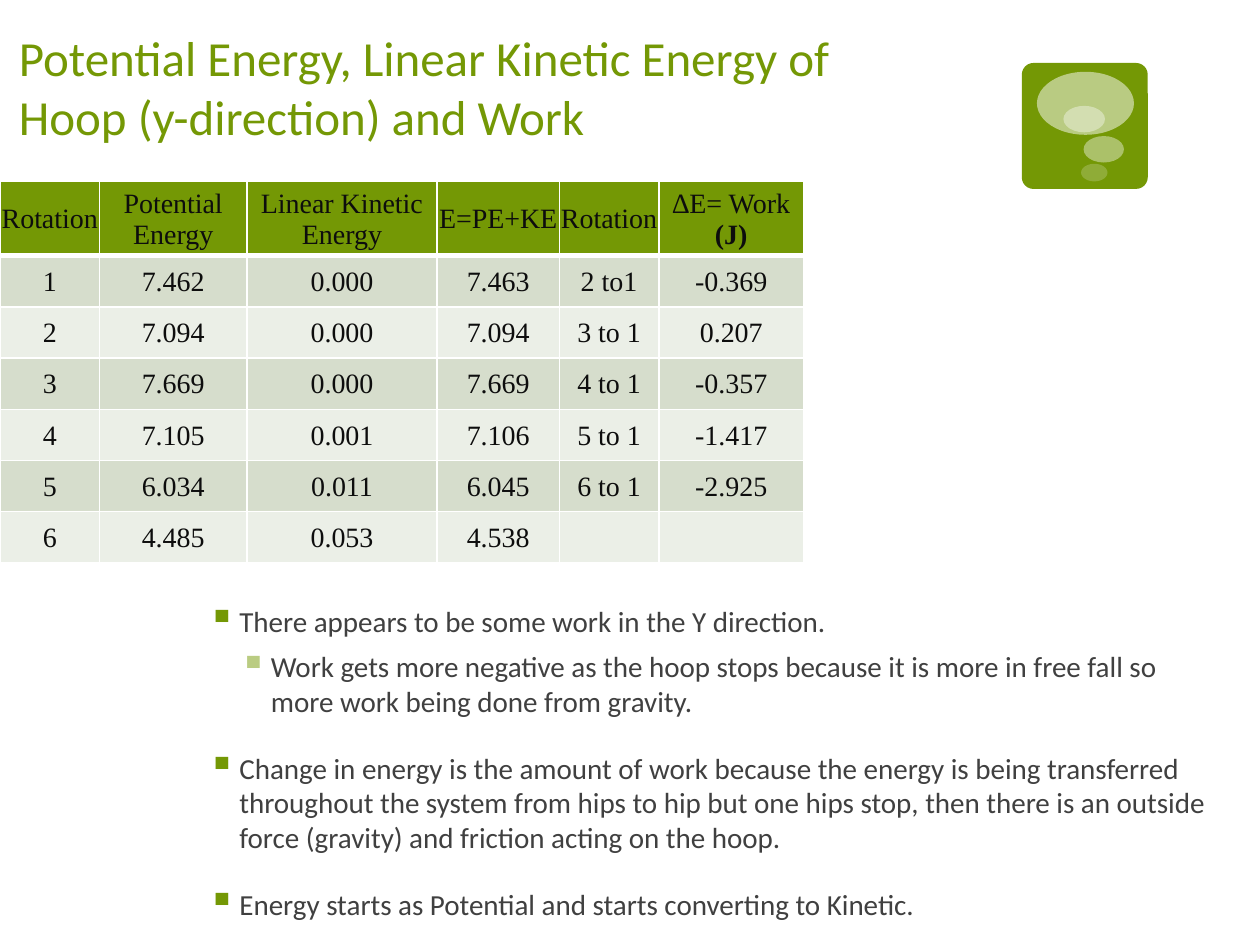
from dataclasses import dataclass

from lxml import etree
from pptx import Presentation
from pptx.dml.color import RGBColor
from pptx.enum.shapes import MSO_SHAPE
from pptx.enum.text import MSO_ANCHOR, PP_ALIGN
from pptx.oxml.ns import qn
from pptx.util import Inches, Pt

ROUNDED, ELLIPSE = MSO_SHAPE.ROUNDED_RECTANGLE, MSO_SHAPE.OVAL
TOP, MIDDLE, BOTTOM = MSO_ANCHOR.TOP, MSO_ANCHOR.MIDDLE, MSO_ANCHOR.BOTTOM
CENTER = PP_ALIGN.CENTER


@dataclass(frozen=True)
class Theme:
    green: str = "749805"
    pale_green: str = "BACC82"
    white: str = "FFFFFF"
    body_text: str = "404040"
    table_text: str = "0D0D0D"
    bands: tuple = ("D6DDCC", "EBEFE7")
    font: str = "Calibri"
    table_font: str = "Times New Roman"
    title_size: float = 28
    table_size: float = 16
    body_size: float = 16.6


THEME = Theme()

TITLE = "Potential Energy, Linear Kinetic Energy of Hoop (y-direction) and Work"

# Left, top, width and height as shares of the badge; last is the opacity in percent.
BUBBLES = [
    (0.12, 0.07, 0.77, 0.50, 50),
    (0.49, 0.58, 0.32, 0.21, 40),
    (0.47, 0.80, 0.21, 0.14, 20),
    (0.33, 0.34, 0.33, 0.21, 38),
]

COLUMN_WIDTHS = [0.79, 1.17, 1.51, 0.97, 0.79, 1.15]
HEADER_HEIGHT = 0.59
ENERGY_ROWS = [
    ["Rotation", "Potential Energy", "Linear Kinetic Energy", "E=PE+KE", "Rotation", "∆E= Work\n(J)"],
    ["1", "7.462", "0.000", "7.463", "2 to1", "-0.369"],
    ["2", "7.094", "0.000", "7.094", "3 to 1", "0.207"],
    ["3", "7.669", "0.000", "7.669", "4 to 1", "-0.357"],
    ["4", "7.105", "0.001", "7.106", "5 to 1", "-1.417"],
    ["5", "6.034", "0.011", "6.045", "6 to 1", "-2.925"],
    ["6", "4.485", "0.053", "4.538", "", ""],
]

# Indent level and text.
FINDINGS = [
    (0, "There appears to be some work in the Y direction."),
    (1, "Work gets more negative as the hoop stops because it is more in free fall "
        "so more work being done from gravity."),
    (0, "Change in energy is the amount of work because the energy is being transferred "
        "throughout the system from hips to hip but one hips stop, then there is an "
        "outside force (gravity) and friction acting on the hoop."),
    (0, "Energy starts as Potential and starts converting to Kinetic."),
]


def inches(values):
    return [Inches(value) for value in values]


def add_child(parent, tag, **attributes):
    return etree.SubElement(parent, qn(tag), {name: str(value) for name, value in attributes.items()})


def style_runs(paragraph, font, size, color):
    for run in paragraph.runs:
        run.font.name = font
        run.font.size = Pt(size)
        run.font.color.rgb = RGBColor.from_string(color)


def add_text_frame(slide, box, anchor):
    text_frame = slide.shapes.add_textbox(*inches(box)).text_frame
    text_frame.word_wrap = True
    text_frame.vertical_anchor = anchor
    text_frame.margin_left = text_frame.margin_top = text_frame.margin_bottom = Inches(0.05)
    text_frame.margin_right = Inches(0.1)
    return text_frame


def add_badge_shape(group, kind, box, color, opacity=100):
    shape = group.shapes.add_shape(kind, *inches(box))
    shape.shadow.inherit = False
    shape.fill.solid()
    shape.fill.fore_color.rgb = RGBColor.from_string(color)
    shape.line.fill.background()
    if opacity < 100:
        color_element = next(shape.element.spPr.iter(qn("a:srgbClr")))
        add_child(color_element, "a:alpha", val=opacity * 1000)
    return shape


def add_badge(slide, box):
    left, top, width, height = box
    group = slide.shapes.add_group_shape()
    tile = add_badge_shape(group, ROUNDED, box, THEME.green)
    tile.adjustments[0] = 0.093
    for x, y, w, h, opacity in BUBBLES:
        bubble_box = (left + x * width, top + y * height, w * width, h * height)
        add_badge_shape(group, ELLIPSE, bubble_box, THEME.white, opacity)


def add_title(slide, box):
    text_frame = add_text_frame(slide, box, BOTTOM)
    text_frame.text = TITLE
    style_runs(text_frame.paragraphs[0], THEME.font, THEME.title_size, THEME.green)


def add_cell_borders(cell, widths):
    """Put white borders, given in points by side tag, ahead of the cell fill."""
    properties = cell._tc.get_or_add_tcPr()
    for position, (tag, width) in enumerate(widths.items()):
        line = add_child(properties, tag, w=Pt(width))
        add_child(add_child(line, "a:solidFill"), "a:srgbClr", val=THEME.white)
        properties.insert(position, line)


def fill_cell(cell, text, color, borders):
    cell.text_frame.text = text
    cell.vertical_anchor = MIDDLE
    cell.margin_left = cell.margin_right = cell.margin_top = Inches(0.01)
    cell.margin_bottom = 0
    cell.fill.solid()
    cell.fill.fore_color.rgb = RGBColor.from_string(color)
    add_cell_borders(cell, borders)
    for paragraph in cell.text_frame.paragraphs:
        paragraph.alignment = CENTER
        style_runs(paragraph, THEME.table_font, THEME.table_size, THEME.table_text)


def add_energy_table(slide, box):
    height = box[3]
    table = slide.shapes.add_table(len(ENERGY_ROWS), len(COLUMN_WIDTHS), *inches(box)).table
    for column, width in zip(table.columns, COLUMN_WIDTHS):
        column.width = Inches(width)
    row_height = (height - HEADER_HEIGHT) / (len(ENERGY_ROWS) - 1)
    for index, texts in enumerate(ENERGY_ROWS):
        is_header = index == 0
        table.rows[index].height = Inches(HEADER_HEIGHT if is_header else row_height)
        color = THEME.green if is_header else THEME.bands[(index - 1) % 2]
        borders = {
            "a:lnL": 1,
            "a:lnR": 1,
            "a:lnT": 3 if index == 1 else 1,
            "a:lnB": 3 if is_header else 1,
        }
        for column, text in enumerate(texts):
            cell = table.cell(index, column)
            fill_cell(cell, text, color, borders)
            for run in cell.text_frame.paragraphs[0].runs:
                run.font.bold = False
    unit = table.cell(0, len(COLUMN_WIDTHS) - 1).text_frame.paragraphs[1]
    unit.runs[0].font.bold = True


def add_bullet(paragraph, level):
    properties = paragraph._p.get_or_add_pPr()
    properties.set("marL", str(Inches(0.25 * (level + 1))))
    properties.set("indent", str(Inches(-0.25)))
    color = THEME.pale_green if level else THEME.green
    add_child(add_child(properties, "a:buClr"), "a:srgbClr", val=color)
    add_child(properties, "a:buSzPct", val=130000)
    add_child(properties, "a:buChar", char="▪")


def add_findings(slide, box):
    text_frame = add_text_frame(slide, box, TOP)
    text_frame.text = "\n".join(text for _, text in FINDINGS)
    for paragraph, (level, _) in zip(text_frame.paragraphs, FINDINGS):
        paragraph.level = level
        paragraph.space_before = Pt(6 if level else 18)
        add_bullet(paragraph, level)
        style_runs(paragraph, THEME.font, THEME.body_size, THEME.body_text)


def main():
    presentation = Presentation()
    presentation.slide_width, presentation.slide_height = inches((10, 7.5))
    slide = presentation.slides.add_slide(presentation.slide_layouts[6])
    add_badge(slide, (8.11, 0.5, 1, 1))
    add_title(slide, (0.1, 0.23, 7.38, 0.97))
    add_energy_table(slide, (0, 1.44, sum(COLUMN_WIDTHS), 3.03))
    add_findings(slide, (1.6, 4.74, 8.18, 2.57))
    presentation.save("out.pptx")


if __name__ == "__main__":
    main()
